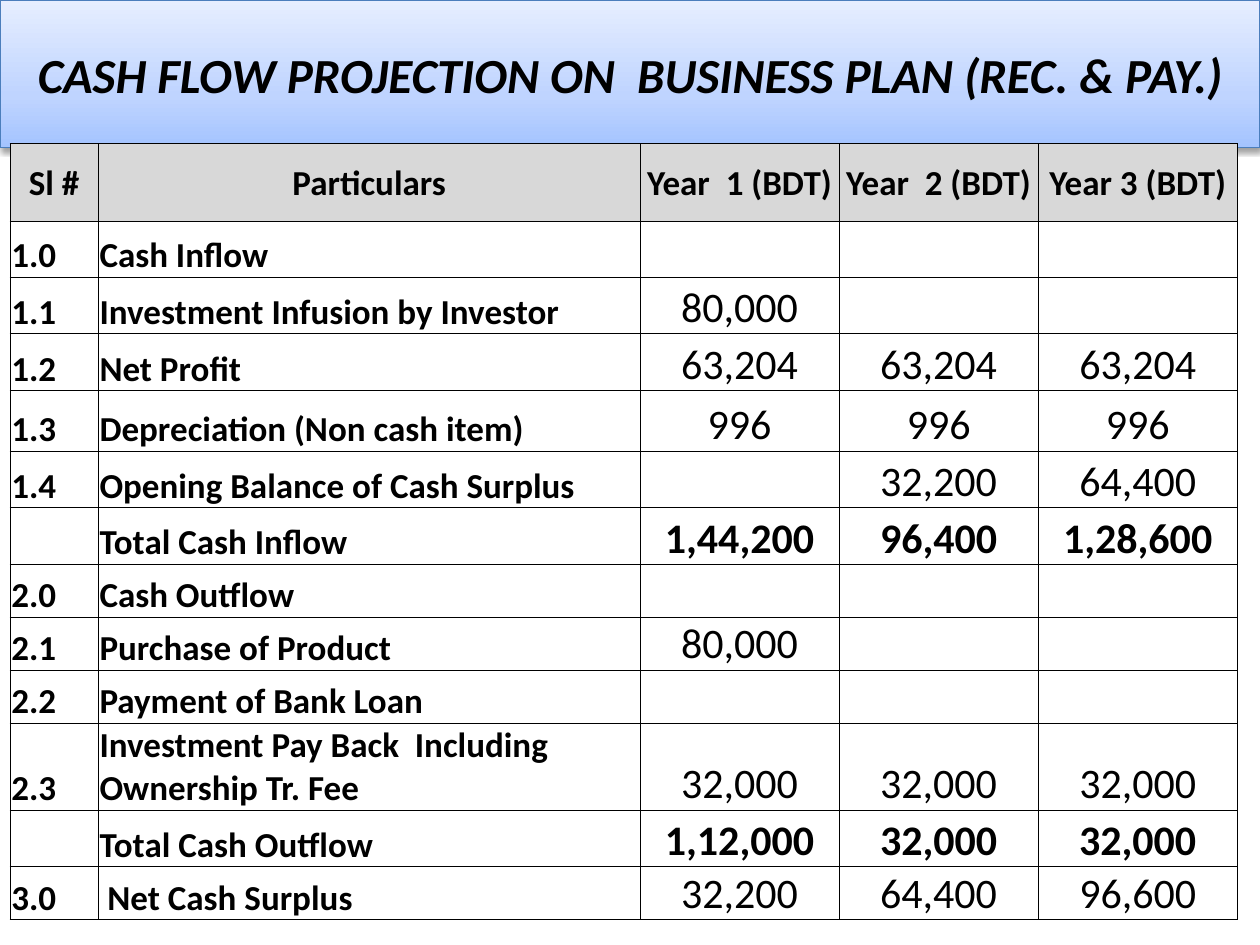
import copy
from dataclasses import dataclass

import pptx
import pptx.dml.color
import pptx.enum.shapes
import pptx.enum.text
import pptx.oxml
import pptx.oxml.ns
import pptx.util
from pptx.util import Inches

ALIGN = pptx.enum.text.PP_ALIGN
ANCHOR = pptx.enum.text.MSO_ANCHOR


@dataclass(frozen=True)
class Theme:
    """Colours, font and type sizes of the slide."""
    font: str = "Calibri"
    text: str = "000000"
    grid: str = "000000"
    header: str = "D8D8D8"
    body: str = "FFFFFF"
    banner_line: str = "4B7EBC"
    banner_stops: tuple = ((0, "A4C4FF"), (0.35, "BFD4FF"), (1, "E6EEFF"))
    title_size: int = 28
    label_size: int = 20
    amount_size: int = 24


THEME = Theme()
TITLE = "CASH FLOW PROJECTION ON  BUSINESS PLAN (REC. & PAY.)"
COLUMN_WIDTHS = (0.7, 4.3, 1.58, 1.58, 1.58)
HEADINGS = ("Sl #", "Particulars", "Year  1 (BDT)", "Year  2 (BDT)", "Year 3 (BDT)")
CASH_FLOWS = (
    (0.44, "1.0", "Cash Inflow", "", "", ""),
    (0.45, "1.1", "Investment Infusion by Investor", "80,000", "", ""),
    (0.45, "1.2", "Net Profit", "63,204", "63,204", "63,204"),
    (0.48, "1.3", "Depreciation (Non cash item)", "996", "996", "996"),
    (0.45, "1.4", "Opening Balance of Cash Surplus", "", "32,200", "64,400"),
    (0.45, "", "Total Cash Inflow", "1,44,200", "96,400", "1,28,600"),
    (0.42, "2.0", "Cash Outflow", "", "", ""),
    (0.42, "2.1", "Purchase of Product", "80,000", "", ""),
    (0.42, "2.2", "Payment of Bank Loan", "", "", ""),
    (0.69, "2.3", "Investment Pay Back  Including Ownership Tr. Fee",
     "32,000", "32,000", "32,000"),
    (0.45, "", "Total Cash Outflow", "1,12,000", "32,000", "32,000"),
    (0.42, "3.0", " Net Cash Surplus", "32,200", "64,400", "96,600"),
)


def rgb(value):
    """Turn a hex string into a colour."""
    return pptx.dml.color.RGBColor.from_string(value)


def write(paragraph, text, size, align, bold=True, italic=False):
    """Put styled text into a paragraph."""
    paragraph.text = text
    paragraph.alignment = align
    font = paragraph.font
    font.name, font.size = THEME.font, pptx.util.Pt(size)
    font.bold, font.italic = bold, italic
    font.color.rgb = rgb(THEME.text)


def add_shadow(shape):
    """Give a shape a soft shadow below it."""
    shape.shadow.inherit = False
    effects = shape.element.spPr.find(pptx.oxml.ns.qn("a:effectLst"))
    effects.append(pptx.oxml.parse_xml(
        f'<a:outerShdw {pptx.oxml.ns.nsdecls("a")} blurRad="39370" dist="20320" '
        'dir="5400000" rotWithShape="0"><a:srgbClr val="000000">'
        '<a:alpha val="38000"/></a:srgbClr></a:outerShdw>'))


def add_banner(slide):
    """Draw the gradient title banner."""
    banner = slide.shapes.add_shape(
        pptx.enum.shapes.MSO_SHAPE.RECTANGLE, 0, 0, Inches(10), Inches(1.17))
    banner.fill.gradient()
    banner.fill.gradient_angle = 90
    stops = next(banner.element.spPr.iter(pptx.oxml.ns.qn("a:gsLst")))
    stops.append(copy.deepcopy(stops[0]))
    for stop, (position, color) in zip(banner.fill.gradient_stops, THEME.banner_stops):
        stop.position = position
        stop.color.rgb = rgb(color)
    banner.line.color.rgb = rgb(THEME.banner_line)
    banner.line.width = pptx.util.Pt(0.75)
    add_shadow(banner)
    frame = banner.text_frame
    frame.word_wrap = True
    frame.vertical_anchor = ANCHOR.MIDDLE
    write(frame.paragraphs[0], TITLE, THEME.title_size, ALIGN.CENTER, italic=True)


def add_borders(cell):
    """Rule all four sides of a cell."""
    properties = cell._tc.get_or_add_tcPr()
    for side in ("lnL", "lnR", "lnT", "lnB"):
        properties.append(pptx.oxml.parse_xml(
            f'<a:{side} {pptx.oxml.ns.nsdecls("a")} w="6350"><a:solidFill>'
            f'<a:srgbClr val="{THEME.grid}"/></a:solidFill></a:{side}>'))


def fill_cell(cell, text, size, align, anchor, color, bold=True):
    """Style one table cell and write its text."""
    add_borders(cell)
    cell.fill.solid()
    cell.fill.fore_color.rgb = rgb(color)
    cell.margin_left = cell.margin_right = cell.margin_top = Inches(0.01)
    cell.margin_bottom = 0
    cell.vertical_anchor = anchor
    write(cell.text_frame.paragraphs[0], text, size, align, bold)


def add_cash_flow_table(slide):
    """Build the cash flow table."""
    heights = [0.62] + [height for height, *_ in CASH_FLOWS]
    table = slide.shapes.add_table(
        len(heights), len(COLUMN_WIDTHS), Inches(0.08), Inches(1.14),
        Inches(sum(COLUMN_WIDTHS)), Inches(sum(heights))).table
    table.first_row = table.horz_banding = False
    for column, width in zip(table.columns, COLUMN_WIDTHS):
        column.width = Inches(width)
    for row, height in zip(table.rows, heights):
        row.height = Inches(height)
    for index, heading in enumerate(HEADINGS):
        fill_cell(table.cell(0, index), heading, THEME.label_size,
                  ALIGN.CENTER, ANCHOR.MIDDLE, THEME.header)
    for row_index, (_, *entries) in enumerate(CASH_FLOWS, 1):
        is_total = not entries[0]
        for index, entry in enumerate(entries):
            is_label = index < 2
            fill_cell(table.cell(row_index, index), entry,
                      THEME.label_size if is_label else THEME.amount_size,
                      ALIGN.LEFT if is_label else ALIGN.CENTER,
                      ANCHOR.BOTTOM, THEME.body, is_label or is_total)


def main():
    """Build and save the slide."""
    presentation = pptx.Presentation()
    presentation.slide_width, presentation.slide_height = Inches(10), Inches(7.5)
    slide = presentation.slides.add_slide(presentation.slide_layouts[6])
    add_banner(slide)
    add_cash_flow_table(slide)
    presentation.save("out.pptx")


if __name__ == "__main__":
    main()
